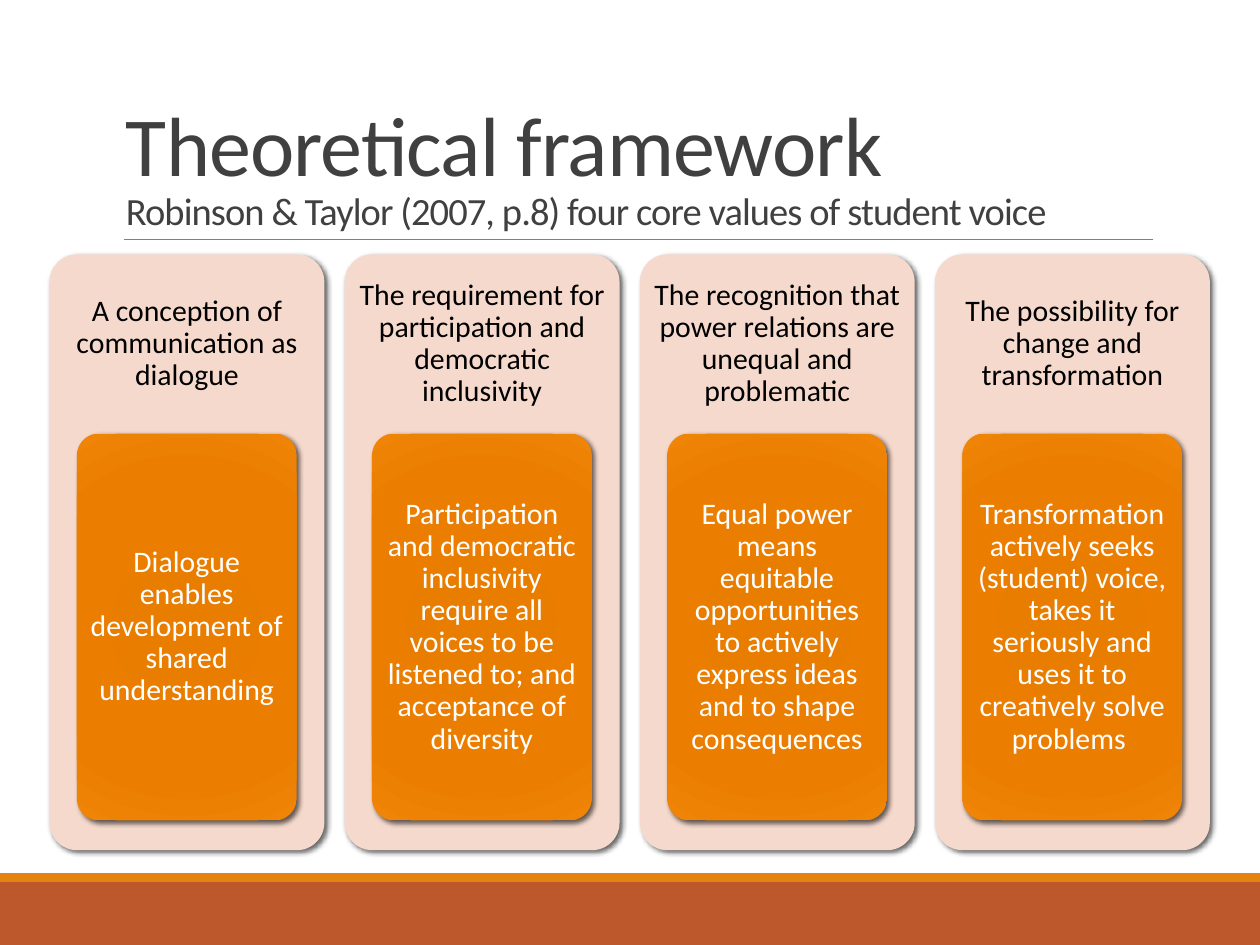
from lxml import etree
from pptx import Presentation
from pptx import util as u
from pptx.dml.color import RGBColor
from pptx.enum import shapes, text
from pptx.oxml import ns

RUST = RGBColor(0xBD, 0x58, 0x2C)
GOLD = RGBColor(0xE4, 0x83, 0x12)
PINK = RGBColor(0xF5, 0xD9, 0xCC)
GREY = RGBColor(0x80, 0x80, 0x80)
DARK = RGBColor(0x40, 0x40, 0x40)
BLACK = RGBColor(0, 0, 0)
WHITE = RGBColor(0xFF, 0xFF, 0xFF)
GLOW = [(0, "E57B00"), (34, "E87D00"), (70, "EB7E00"), (100, "EF8407")]

TITLE = [("Theoretical framework", 48),
         ("Robinson & Taylor (2007, p.8) four core values of student voice", 22)]
VALUES = [
    ("A conception of communication as dialogue",
     "Dialogue enables development of shared understanding"),
    ("The requirement for participation and democratic inclusivity",
     "Participation and democratic inclusivity require all voices to be "
     "listened to; and acceptance of diversity"),
    ("The recognition that power relations are unequal and problematic",
     "Equal power means equitable opportunities to actively express ideas "
     "and to shape consequences"),
    ("The possibility for change and transformation",
     "Transformation actively seeks (student) voice, takes it seriously "
     "and uses it to creatively solve problems "),
]


def add(node, tag, **attrs):
    return etree.SubElement(node, ns.qn(tag), {k: str(v) for k, v in attrs.items()})


def apply(target, style):
    for name, value in style.items():
        setattr(target, name, value)


class Deck:
    font = "Calibri"
    size = 17

    def __init__(self, width, height):
        self.prs = Presentation()
        apply(self.prs, {"slide_width": u.Cm(width), "slide_height": u.Cm(height)})
        self.slide = self.prs.slides.add_slide(self.prs.slide_layouts[6])

    def rect(self, box, fill, kind=shapes.MSO_SHAPE.RECTANGLE):
        shape = self.slide.shapes.add_shape(kind, *map(u.Cm, box))
        shape.shadow.inherit = False
        shape.fill.solid()
        shape.fill.fore_color.rgb = fill
        shape.line.fill.background()
        return shape

    def card(self, box, fill):
        shape = self.rect(box, fill, shapes.MSO_SHAPE.ROUNDED_RECTANGLE)
        shape.adjustments[0] = 0.1
        effects = shape._element.spPr.find(ns.qn("a:effectLst"))
        shade = add(effects, "a:outerShdw", blurRad=u.Pt(3), dist=u.Pt(2),
                    dir=45 * 60000, algn="ctr", rotWithShape=0)
        add(add(shade, "a:srgbClr", val=BLACK), "a:alpha", val=60000)
        return shape

    def glow(self, box):
        props = self.card(box, GOLD)._element.spPr
        grad = etree.Element(ns.qn("a:gradFill"), rotWithShape="1")
        stops = add(grad, "a:gsLst")
        for pos, tint in GLOW:
            add(add(stops, "a:gs", pos=pos * 1000), "a:srgbClr", val=tint)
        ring = add(grad, "a:path", path="circle")
        add(ring, "a:fillToRect", **dict.fromkeys("ltrb", 100000))
        props.replace(props.find(ns.qn("a:solidFill")), grad)

    def rule(self, left, right, top):
        line = self.slide.shapes.add_connector(
            shapes.MSO_CONNECTOR.STRAIGHT, *map(u.Cm, (left, top, right, top)))
        line.line.color.rgb = GREY
        line.line.width = u.Pt(0.5)
        add(line._element.spPr, "a:effectLst")

    def frame(self, box, pad, anchor, align, space):
        frame = self.slide.shapes.add_textbox(*map(u.Cm, box)).text_frame
        side, edge = map(u.Cm, pad)
        apply(frame, {"word_wrap": True, "vertical_anchor": anchor,
                      "margin_left": side, "margin_right": side,
                      "margin_top": edge, "margin_bottom": edge})
        para = frame.paragraphs[0]
        apply(para, {"alignment": align, "line_spacing": space})
        return para

    def run(self, para, words, size, tint):
        run = para.add_run()
        run.text = words
        apply(run.font, {"name": self.font, "size": u.Pt(size)})
        run.font.color.rgb = tint
        return run

    def title(self, box, lines):
        para = self.frame(box, (0.25, 0.13), text.MSO_ANCHOR.BOTTOM,
                          text.PP_ALIGN.LEFT, 0.85)
        for index, (words, size) in enumerate(lines):
            if index:
                para.add_line_break()
            run = self.run(para, words, size, DARK)
            run.font._element.set("spc", "-50")

    def label(self, box, words, tint, pad):
        para = self.frame(box, pad, text.MSO_ANCHOR.MIDDLE,
                          text.PP_ALIGN.CENTER, 0.9)
        self.run(para, words, self.size, tint)


def main():
    deck = Deck(25.4, 19.05)
    deck.rect((0, 17.78, 25.4, 1.27), RUST)
    deck.rect((0, 17.6, 25.4, 0.18), GOLD)
    deck.rule(2.49, 23.24, 4.83)
    deck.title((2.29, 0.79, 20.95, 4.04), TITLE)
    for index, (head, body) in enumerate(VALUES):
        left = 1 + 5.95 * index
        deck.card((left, 5.13, 5.54, 12.01), PINK)
        deck.label((left, 5.13, 5.54, 3.61), head, BLACK, (0.18, 0.18))
        deck.glow((left + 0.55, 8.74, 4.43, 7.8))
        deck.label((left + 0.68, 8.87, 4.17, 7.54), body, WHITE, (0.12, 0.1))
    deck.prs.save("out.pptx")


if __name__ == "__main__":
    main()
